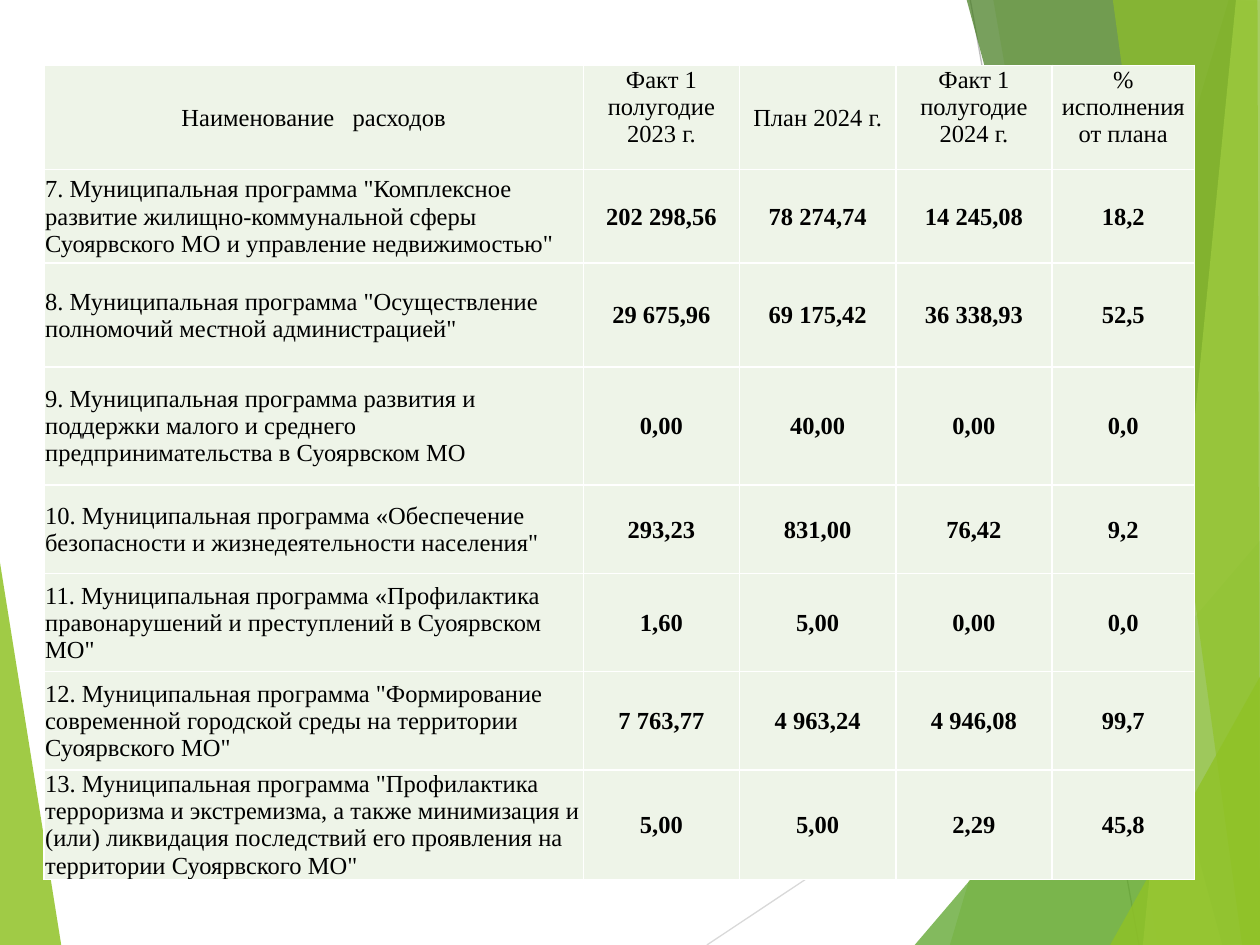
from lxml.etree import SubElement
from pptx import Presentation
from pptx.dml.color import RGBColor
from pptx.enum.shapes import MSO_CONNECTOR as Connector
from pptx.enum.text import MSO_ANCHOR as Anchor, PP_ALIGN as Align
from pptx.oxml.ns import qn
from pptx.util import Cm, Pt

# Background facets: colour, opacity in percent, corner points in cm
LEFT_FACET = ("90C226", 85, [(-0.03, 11.15), (1.24, 19.08), (-0.03, 19.05)])
RIGHT_FACETS = [
    ("90C226", 30, [(24.77, 0), (19.15, 19.05), (25.45, 19.08), (25.43, 0.03)]),
    ("90C226", 20, [(20.02, -0.03), (23.34, 19.05), (25.43, 19.05), (25.43, -0.03)]),
    ("54A021", 72, [(18.44, 19.05), (25.4, 10.9), (25.43, 19.05)]),
    ("3F7819", 70, [(19.48, -0.03), (24.64, 19.05), (25.43, 19.02), (25.43, -0.03)]),
    ("C0E474", 70, [(24.92, -0.03), (23.04, 19.05), (25.43, 19.05), (25.4, -0.03)]),
    ("90C226", 65, [(22.43, -0.03), (25.04, 19.05), (25.4, 19.05), (25.35, -0.03)]),
    ("90C226", 80, [(22.38, 19.05), (25.43, 13.59), (25.43, 19.05)]),
]
# Thin lines: colour, start x and y, end x and y in cm
THIN_LINES = [
    ("D9D9D9", 14.25, 19.05, 25.43, 11.61),
    ("BFBFBF", 19.56, 0, 22.96, 19.05),
]

COLUMN_WIDTHS = [10.87, 3.15, 3.15, 3.15, 2.87]
ROW_HEIGHTS = [2.1, 1.88, 2.1, 2.38, 1.78, 1.98, 1.98, 1.98]
EXPENSES = [
    ("Наименование   расходов", "Факт 1 полугодие 2023 г.", "План 2024 г.",
     "Факт 1 полугодие 2024 г.", "% исполнения от плана"),
    ('7. Муниципальная программа "Комплексное развитие жилищно-коммунальной сферы '
     'Суоярвского МО и управление недвижимостью"',
     "202 298,56", "78 274,74", "14 245,08", "18,2"),
    ('8. Муниципальная программа "Осуществление полномочий местной администрацией"',
     "29 675,96", "69 175,42", "36 338,93", "52,5"),
    ("9. Муниципальная программа развития и поддержки малого и среднего "
     "предпринимательства в Суоярвском МО",
     "0,00", "40,00", "0,00", "0,0"),
    ('10. Муниципальная программа «Обеспечение безопасности и жизнедеятельности населения"',
     "293,23", "831,00", "76,42", "9,2"),
    ('11. Муниципальная программа «Профилактика правонарушений и преступлений '
     'в Суоярвском  МО"',
     "1,60", "5,00", "0,00", "0,0"),
    ('12. Муниципальная программа "Формирование современной городской среды '
     'на территории Суоярвского МО"',
     "7 763,77", "4 963,24", "4 946,08", "99,7"),
    ('13. Муниципальная программа "Профилактика терроризма и экстремизма, а также '
     'минимизация и (или) ликвидация последствий его проявления на территории '
     'Суоярвского МО"',
     "5,00", "5,00", "2,29", "45,8"),
]

CELL_FORMAT = {"margin_left": Cm(0.02), "margin_right": Cm(0.02),
               "margin_top": Cm(0.02), "margin_bottom": 0}
FONT_FORMAT = {"name": "Times New Roman", "size": Pt(14)}


def color(value):
    return RGBColor.from_string(value)


def apply_format(target, values):
    for name, value in values.items():
        setattr(target, name, value)


def add_facet(page, fill_color, opacity, points):
    corners = [(Cm(x), Cm(y)) for x, y in points]
    builder = page.shapes.build_freeform(*corners[0])
    builder.add_line_segments(corners[1:], close=True)
    facet = builder.convert_to_shape()
    facet.shadow.inherit = False
    facet.line.fill.background()
    facet.fill.solid()
    facet.fill.fore_color.rgb = color(fill_color)
    tint = facet._element.spPr.find(".//" + qn("a:srgbClr"))
    SubElement(tint, qn("a:alpha"), val=str(opacity * 1000))


def add_thin_line(page, line_color, *ends):
    line = page.shapes.add_connector(Connector.STRAIGHT, *map(Cm, ends))
    line.line.color.rgb = color(line_color)
    line.line.width = Pt(0.75)
    SubElement(line._element.spPr, qn("a:effectLst"))


def add_borders(cell, border_color):
    properties = cell._tc.get_or_add_tcPr()
    for side in ("lnL", "lnR", "lnT", "lnB"):
        border = SubElement(properties, qn("a:" + side), w=str(Pt(1)))
        fill = SubElement(border, qn("a:solidFill"))
        SubElement(fill, qn("a:srgbClr"), val=border_color)


def fill_cell(cell, text, align, anchor, bold):
    apply_format(cell, {**CELL_FORMAT, "vertical_anchor": anchor})
    add_borders(cell, "FFFFFF")
    cell.fill.solid()
    cell.fill.fore_color.rgb = color("EEF4E8")
    para = cell.text_frame.paragraphs[0]
    para.alignment = align
    span = para.add_run()
    span.text = text
    apply_format(span.font, {**FONT_FORMAT, "bold": bold})
    span.font.color.rgb = color("000000")


def add_expense_table(page):
    frame = page.shapes.add_table(
        len(EXPENSES), len(COLUMN_WIDTHS), Cm(0.89), Cm(1.32),
        Cm(sum(COLUMN_WIDTHS)), Cm(sum(ROW_HEIGHTS)))
    table = frame.table
    for column, width in zip(table.columns, COLUMN_WIDTHS):
        column.width = Cm(width)
    for row, height in zip(table.rows, ROW_HEIGHTS):
        row.height = Cm(height)
    for r, texts in enumerate(EXPENSES):
        for c, text in enumerate(texts):
            is_name = r > 0 and c == 0
            # Three-line headings sit at the top, all else in the middle
            is_top = r == 0 and c in (1, 3, 4)
            fill_cell(table.cell(r, c), text,
                      Align.LEFT if is_name else Align.CENTER,
                      Anchor.TOP if is_top else Anchor.MIDDLE,
                      bold=r > 0 and c > 0)


def main():
    deck = Presentation()
    deck.slide_width, deck.slide_height = Cm(25.4), Cm(19.05)
    page = deck.slides.add_slide(deck.slide_layouts[6])

    # Background
    add_facet(page, *LEFT_FACET)
    for line in THIN_LINES:
        add_thin_line(page, *line)
    for facet in RIGHT_FACETS:
        add_facet(page, *facet)

    # Expenses by programme
    add_expense_table(page)
    deck.save("out.pptx")


if __name__ == "__main__":
    main()
